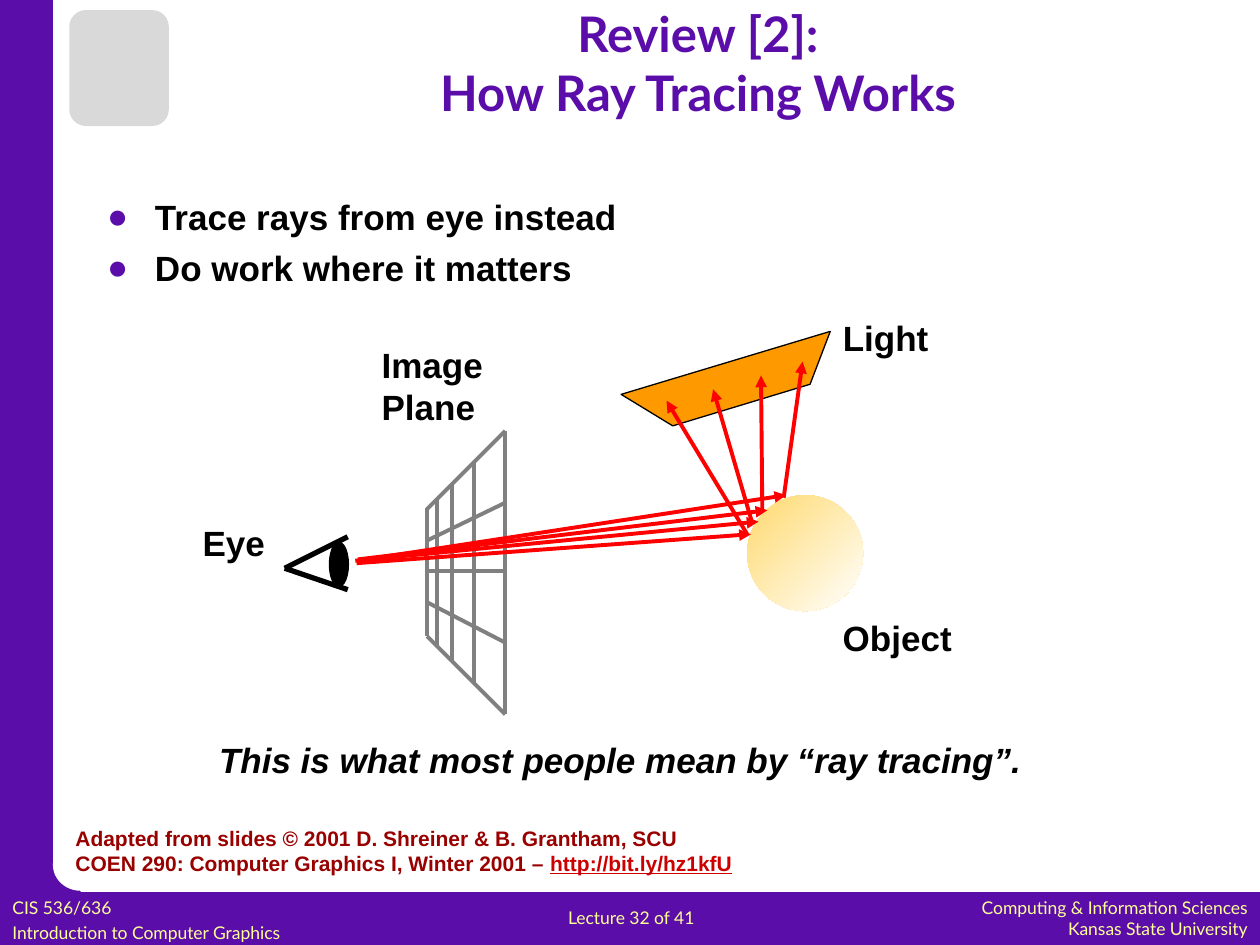
from dataclasses import dataclass

from lxml.etree import SubElement
from pptx import Presentation
from pptx.dml.color import RGBColor
from pptx.enum.shapes import MSO_CONNECTOR as Connector, MSO_SHAPE as Shape
from pptx.enum.text import MSO_ANCHOR as Anchor, MSO_AUTO_SIZE as AutoSize, PP_ALIGN as Align
from pptx.oxml.ns import qn
from pptx.util import Inches, Pt


@dataclass(frozen=True)
class Theme:
    purple: str = "5B0DAA"
    white: str = "FFFFFF"
    black: str = "000000"
    cream: str = "FFFF99"
    ray: str = "FF0000"
    grid: str = "808080"
    light: str = "FF9900"
    sphere: str = "FFD96D"
    source: str = "990000"
    link: str = "CC0000"
    mark: str = "D9D9D9"
    heading_font: str = "Lato"
    body_font: str = "Arial"
    title_size: int = 28
    body_size: int = 20
    source_size: int = 12
    footer_size: int = 10


THEME = Theme()

# Content
TITLE = ["Review [2]:", "How Ray Tracing Works"]
BULLETS = ["Trace rays from eye instead", "Do work where it matters"]
REMARK = "This is what most people mean by “ray tracing”."
LABELS = [  # lines, (left, top, width, height)
    (["Eye"], (1.51, 4.09, 0.7, 0.44)),
    (["Light"], (6.59, 2.46, 0.89, 0.44)),
    (["Image", "Plane"], (2.93, 2.68, 1.01, 0.77)),
    (["Object"], (6.59, 4.84, 1.07, 0.44)),
]
SOURCE = [
    "Adapted from slides © 2001 D. Shreiner & B. Grantham, SCU",
    "COEN 290: Computer Graphics I, Winter 2001 – ",
]
SOURCE_LINK = "http://bit.ly/hz1kfU"
FOOTERS = [  # lines, box, alignment, space between lines
    (["Computing & Information Sciences", "Kansas State University"],
     (7.18, 7.07, 2.82, 0.43), Align.RIGHT, 0),
    (["CIS 536/636", "Introduction to Computer Graphics"],
     (0, 7.07, 2.95, 0.44), Align.LEFT, 2),
    (["Lecture 32 of 41"], (4.41, 7.15, 1.52, 0.27), Align.LEFT, 0),
]

# Geometry of the drawing, in inches
FRAME = [  # preset, box, colour
    (Shape.RECTANGLE, (0, 7.08, 10, 0.42), THEME.purple),
    (Shape.RECTANGLE, (0, 0, 0.42, 7.5), THEME.purple),
    (Shape.RECTANGLE, (0.2, 6.85, 0.44, 0.44), THEME.purple),
    (Shape.OVAL, (0.42, 6.66, 0.44, 0.41), THEME.white),
    (Shape.ROUNDED_RECTANGLE, (0.55, 0.08, 0.79, 0.92), THEME.mark),
]
EYE_LIDS = [((2.26, 4.51), (2.76, 4.26)), ((2.26, 4.51), (2.76, 4.68))]
PUPIL = (2.62, 4.31, 0.14, 0.34)
LIGHT_PANEL = [(6.59, 2.63), (6.43, 3.05), (5.34, 3.38), (4.93, 3.13)]
SPHERE = (5.93, 3.93, 0.92, 0.92)
PLANE_COLUMNS = [  # x, top, bottom
    (3.39, 4.03, 5.05), (3.47, 3.95, 5.12), (3.59, 3.83, 5.25),
    (3.76, 3.67, 5.42), (4.01, 3.42, 5.67),
]
PLANE_ROWS = [  # y at the left column, y at the right column
    (4.04, 3.42), (4.29, 3.99), (4.53, 4.53), (4.78, 5.1), (5.05, 5.67),
]
LIGHT_RAYS = [
    ((5.93, 4.24), (5.29, 3.18)), ((5.97, 4.15), (5.66, 3.09)),
    ((6.22, 3.95), (6.37, 2.87)), ((6.05, 4.05), (6.04, 2.98)),
]
EYE_RAYS = [
    ((2.83, 4.47), (5.96, 4.24)), ((2.82, 4.45), (6.02, 4.14)),
    ((2.84, 4.44), (6.09, 4.05)), ((2.84, 4.45), (6.24, 3.93)),
]


def color(value):
    return RGBColor.from_string(value)


def inches(values):
    return [Inches(value) for value in values]


def add_span(para, text, size, ink=THEME.black, face=THEME.body_font, bold=True, italic=False):
    span = para.add_run()
    span.text = text
    font = span.font
    font.size, font.name, font.bold, font.italic = Pt(size), face, bold, italic
    font.color.rgb = color(ink)
    return span


def write_lines(frame, lines, size, align=Align.LEFT, gap=0, **style):
    for index, text in enumerate(lines):
        para = frame.add_paragraph() if index else frame.paragraphs[0]
        para.alignment = align
        para.space_before = Pt(gap if index else 0)
        add_span(para, text, size, **style)


def add_text(page, lines, box, size, **style):
    frame = page.shapes.add_textbox(*inches(box)).text_frame
    frame.word_wrap = False
    frame.auto_size = AutoSize.SHAPE_TO_FIT_TEXT
    write_lines(frame, lines, size, **style)
    return frame


def paint(shape, fill, outline=None, width=0.75):
    shape.shadow.inherit = False
    shape.fill.solid()
    shape.fill.fore_color.rgb = color(fill)
    if outline:
        shape.line.color.rgb = color(outline)
        shape.line.width = Pt(width)
    else:
        shape.line.fill.background()


def add_line(page, start, end, ink, width, arrow=False):
    line = page.shapes.add_connector(Connector.STRAIGHT, *inches(start + end))
    line.line.color.rgb = color(ink)
    line.line.width = Pt(width)
    if arrow:
        SubElement(line.line._get_or_add_ln(), qn("a:tailEnd"), type="triangle")
    SubElement(line._element.spPr, qn("a:effectLst"))


def place(holder, box):
    holder.left, holder.top, holder.width, holder.height = inches(box)
    holder.text_frame.word_wrap = True
    holder.text_frame.auto_size = AutoSize.NONE
    return holder.text_frame


def add_bullet(para):
    props = para._p.get_or_add_pPr()
    props.set("marL", str(Inches(0.38)))
    props.set("indent", str(-Inches(0.38)))
    SubElement(SubElement(props, qn("a:buClr")), qn("a:srgbClr"), val=THEME.purple)
    SubElement(props, qn("a:buFont"), typeface=THEME.body_font)
    SubElement(props, qn("a:buChar"), char="●")


def main():
    deck = Presentation()
    deck.slide_width, deck.slide_height = Inches(10), Inches(7.5)
    page = deck.slides.add_slide(deck.slide_layouts[1])

    # Title and bullets
    title = place(page.shapes.title, (1.25, 0.08, 8.58, 0.83))
    title.vertical_anchor = Anchor.MIDDLE
    write_lines(title, TITLE, THEME.title_size, align=Align.CENTER,
                ink=THEME.purple, face=THEME.heading_font)
    body = place(page.placeholders[1], (0.75, 1.5, 8.69, 5.17))
    write_lines(body, BULLETS, THEME.body_size, gap=5)
    for para in body.paragraphs:
        add_bullet(para)

    # Page frame and footers
    for preset, box, fill in FRAME:
        paint(page.shapes.add_shape(preset, *inches(box)), fill)
    for lines, box, align, gap in FOOTERS:
        add_text(page, lines, box, THEME.footer_size, align=align, gap=gap,
                 ink=THEME.cream, face=THEME.heading_font, bold=False)

    # Eye
    for start, end in EYE_LIDS:
        add_line(page, start, end, THEME.black, 3)
    pupil = page.shapes.add_shape(Shape.OVAL, *inches(PUPIL))
    paint(pupil, THEME.black, THEME.black, 1.5)

    # Light and its rays
    corners = [tuple(inches(corner)) for corner in LIGHT_PANEL]
    builder = page.shapes.build_freeform(*corners[0])
    builder.add_line_segments(corners[1:], close=True)
    paint(builder.convert_to_shape(), THEME.light, THEME.black)
    for start, end in LIGHT_RAYS:
        add_line(page, start, end, THEME.ray, 2.25, arrow=True)

    # Image plane
    for x, top, bottom in PLANE_COLUMNS:
        add_line(page, (x, top), (x, bottom), THEME.grid, 2.25)
    left, right = PLANE_COLUMNS[0][0], PLANE_COLUMNS[-1][0]
    for left_y, right_y in PLANE_ROWS:
        add_line(page, (left, left_y), (right, right_y), THEME.grid, 2.25)

    # Object and the rays from the eye
    sphere = page.shapes.add_shape(Shape.OVAL, *inches(SPHERE))
    paint(sphere, THEME.sphere)
    sphere.fill.gradient()
    sphere.fill.gradient_angle = 315
    for stop, tint in zip(sphere.fill.gradient_stops, (THEME.sphere, THEME.white)):
        stop.color.rgb = color(tint)
    for start, end in EYE_RAYS:
        add_line(page, start, end, THEME.ray, 2.25, arrow=True)

    # Labels, remark and source
    for lines, box in LABELS:
        add_text(page, lines, box, THEME.body_size)
    add_text(page, [REMARK], (1.64, 5.81, 6.61, 0.44), THEME.body_size, italic=True)
    source = add_text(page, SOURCE, (0.5, 6.5, 5.51, 0.5), THEME.source_size, ink=THEME.source)
    link = add_span(source.paragraphs[-1], SOURCE_LINK, THEME.source_size, ink=THEME.link)
    link.font.underline = True

    deck.save("out.pptx")


if __name__ == "__main__":
    main()
